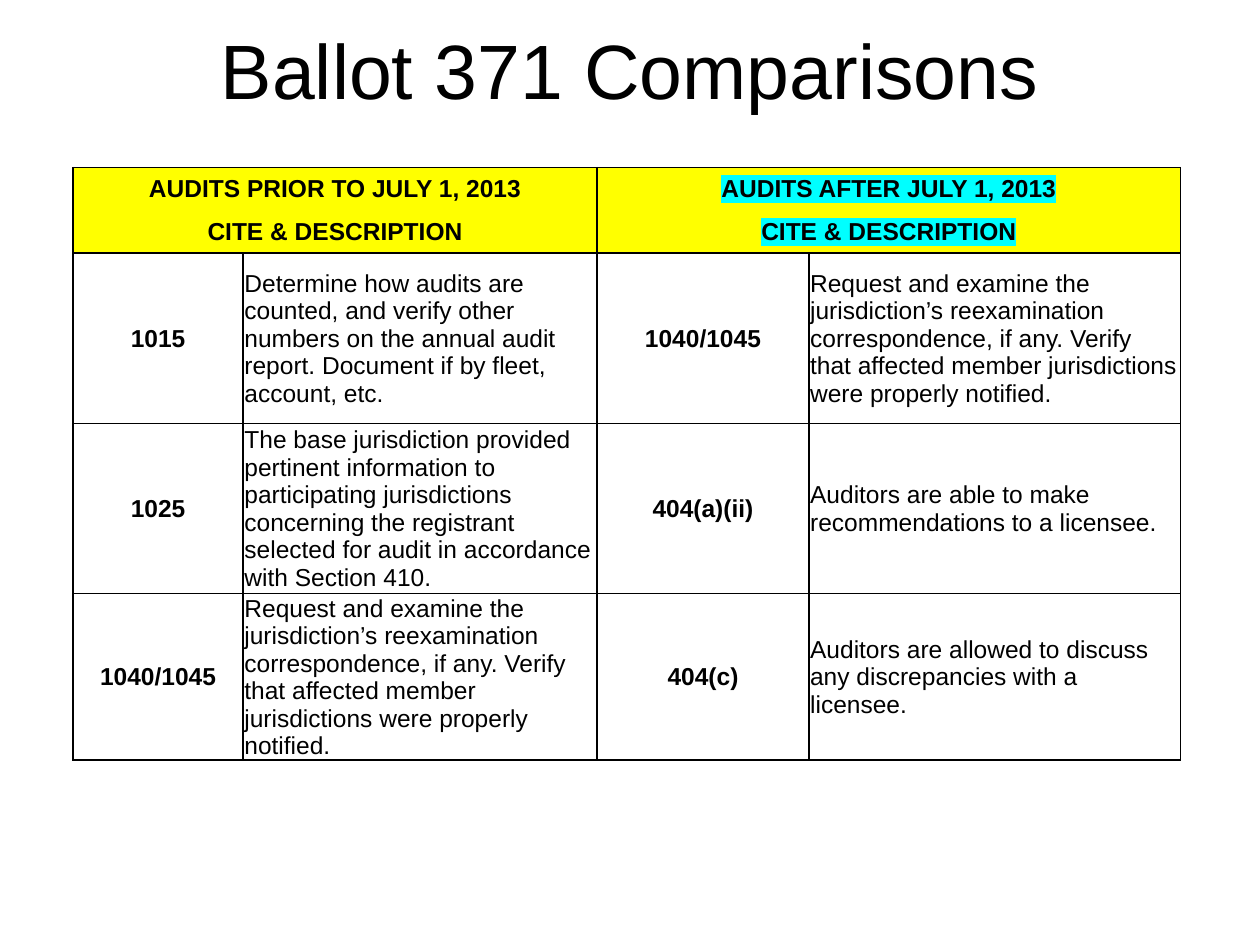
from lxml import etree
from pptx import Presentation
from pptx.dml.color import RGBColor
from pptx.enum.text import MSO_ANCHOR, PP_ALIGN
from pptx.oxml.ns import qn
from pptx.util import Inches, Pt

CENTER, LEFT = PP_ALIGN.CENTER, PP_ALIGN.LEFT
MIDDLE = MSO_ANCHOR.MIDDLE

FONT = "Arial"
COLORS = {"text": "000000", "line": "000000", "header": "FFFF00", "after": "00FFFF"}

COL_WIDTHS = [1.35, 2.81, 1.68, 2.95]
ROW_HEIGHTS = [0.33, 0.35, 1.35, 1.35, 1.09]
HEADERS = [
    ["AUDITS PRIOR TO JULY 1, 2013", "AUDITS AFTER JULY 1, 2013"],
    ["CITE & DESCRIPTION", "CITE & DESCRIPTION"],
]
REEXAMINATION = ("Request and examine the jurisdiction’s reexamination correspondence, "
                 "if any. Verify that affected member jurisdictions were properly notified.")
BODY = [
    ["1015",
     "Determine how audits are counted, and verify other numbers on the annual audit "
     "report. Document if by fleet, account, etc.",
     "1040/1045", REEXAMINATION],
    ["1025",
     "The base jurisdiction provided pertinent information to participating jurisdictions "
     "concerning the registrant selected for audit in accordance with Section 410.",
     "404(a)(ii)", "Auditors are able to make recommendations to a licensee."],
    ["1040/1045", REEXAMINATION,
     "404(c)", "Auditors are allowed to discuss any discrepancies with a licensee."],
]


def style_text(tf, size, align, bold=False):
    p = tf.paragraphs[0]
    p.alignment = align
    r = p.runs[0]
    r.font.size = Pt(size)
    r.font.bold = bold
    r.font.color.rgb = RGBColor.from_string(COLORS["text"])
    r.font.name = FONT
    return r


def highlight(r, color):
    mark = etree.Element(qn("a:highlight"))
    etree.SubElement(mark, qn("a:srgbClr"), val=color)
    r.font._element.find(qn("a:solidFill")).addnext(mark)


def set_borders(cell, hidden=""):
    """Draw all four sides except those listed in hidden."""
    tcPr = cell._tc.get_or_add_tcPr()
    for side in "LRTB":
        ln = etree.SubElement(tcPr, qn("a:ln" + side), w=str(Pt(1)))
        if side in hidden:
            etree.SubElement(ln, qn("a:noFill"))
        else:
            fill = etree.SubElement(ln, qn("a:solidFill"))
            etree.SubElement(fill, qn("a:srgbClr"), val=COLORS["line"])


def format_cell(cell, fill=None, hidden=""):
    cell.margin_left = cell.margin_right = cell.margin_top = Inches(0.01)
    cell.margin_bottom = 0
    cell.vertical_anchor = MIDDLE
    set_borders(cell, hidden)
    if fill:
        cell.fill.solid()
        cell.fill.fore_color.rgb = RGBColor.from_string(fill)
    else:
        cell.fill.background()


def add_title(s, text):
    title = s.shapes.title
    title.left, title.top = Inches(0.75), Inches(0.17)
    title.width, title.height = Inches(8.5), Inches(0.75)
    tf = title.text_frame
    tf.text = text
    tf.vertical_anchor = MIDDLE
    style_text(tf, 44, CENTER)


def fill_headers(table):
    # Each heading spans a cite column and a description column
    for row, texts in enumerate(HEADERS):
        for half, text in enumerate(texts):
            first, last = table.cell(row, 2 * half), table.cell(row, 2 * half + 1)
            first.merge(last)
            inner = "B" if row == 0 else "T"
            format_cell(first, COLORS["header"], inner)
            format_cell(last, COLORS["header"], inner)
            first.text_frame.text = text
            r = style_text(first.text_frame, 14, CENTER, bold=True)
            highlight(r, COLORS["after" if half else "header"])


def fill_body(table):
    for row, texts in enumerate(BODY, start=len(HEADERS)):
        for col, text in enumerate(texts):
            cell = table.cell(row, col)
            is_cite = col % 2 == 0
            format_cell(cell)
            cell.text_frame.text = text
            style_text(cell.text_frame, 14, CENTER if is_cite else LEFT, bold=is_cite)


def add_comparison_table(s):
    table = s.shapes.add_table(
        len(ROW_HEIGHTS), len(COL_WIDTHS), Inches(0.58), Inches(1.33),
        Inches(sum(COL_WIDTHS)), Inches(sum(ROW_HEIGHTS))).table
    for column, width in zip(table.columns, COL_WIDTHS):
        column.width = Inches(width)
    for row, height in zip(table.rows, ROW_HEIGHTS):
        row.height = Inches(height)
    fill_headers(table)
    fill_body(table)


def main():
    prs = Presentation()
    prs.slide_width, prs.slide_height = Inches(10), Inches(7.5)
    s = prs.slides.add_slide(prs.slide_layouts[5])
    add_title(s, "Ballot 371 Comparisons")
    add_comparison_table(s)
    prs.save("out.pptx")


if __name__ == "__main__":
    main()
